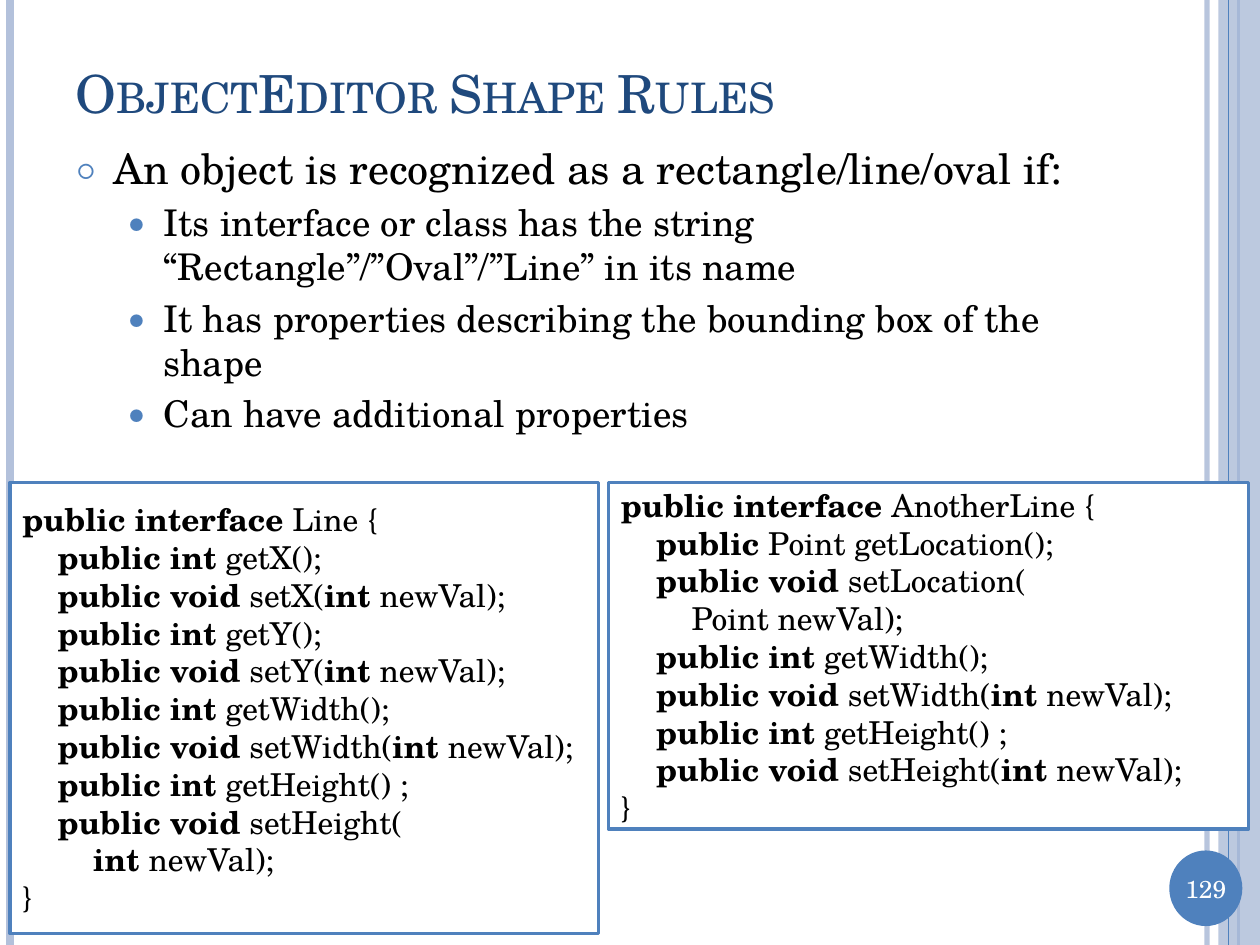
from lxml import etree
from pptx import Presentation
from pptx.dml.color import RGBColor
from pptx.enum.shapes import MSO_CONNECTOR as CONN, MSO_SHAPE as SHAPE
from pptx.enum.text import MSO_ANCHOR as ANCHOR, PP_ALIGN as ALIGN
from pptx.oxml.ns import qn
from pptx.util import Inches, Pt

FONT = "TeX Gyre Schola"
BLUE = RGBColor(0x4F, 0x81, 0xBD)
PALE = RGBColor(0xB3, 0xC1, 0xDB)
NAVY = RGBColor(0x1F, 0x49, 0x7D)
WHITE = RGBColor(0xFF, 0xFF, 0xFF)
BLACK = RGBColor(0, 0, 0)

CODE_INDENT = 0.28
RULES = [
    (0, "An object is recognized as a rectangle/line/oval if:"),
    (1, "Its interface or class has the string “Rectangle”/”Oval”/”Line” in its name"),
    (1, "It has properties describing the bounding box of the shape"),
    (1, "Can have additional properties"),
]
BULLETS = [("○", 70, 24, 0.3, 6), ("●", 80, 21, 0.7, 4.2)]
LINE_CODE = [
    (0, "*public interface* Line {"),
    (1, "*public int *getX();"),
    (1, "*public void *setX(*int *newVal);"),
    (1, "*public int *getY();"),
    (1, "*public void *setY(*int *newVal);"),
    (1, "*public int *getWidth();"),
    (1, "*public void *setWidth(*int *newVal);"),
    (1, "*public int *getHeight() ;"),
    (1, "*public void *setHeight("),
    (2, "*int *newVal);"),
    (0, "}"),
]
ANOTHER_LINE_CODE = [
    (0, "*public interface *AnotherLine {"),
    (1, "*public* Point getLocation();"),
    (1, "*public void *setLocation("),
    (2, "Point newVal);"),
    (1, "*public int *getWidth();"),
    (1, "*public void *setWidth(*int *newVal);"),
    (1, "*public int *getHeight() ;"),
    (1, "*public void *setHeight(*int *newVal);"),
    (0, "}"),
]


def add_text(tf, text, size=18, color=BLACK, align=ALIGN.LEFT, small_caps=False,
             before=0, left=0, hanging=0, level=0):
    """Add a paragraph, with bold switched on and off at each asterisk."""
    p = tf.paragraphs[0] if not tf.paragraphs[0].runs else tf.add_paragraph()
    p.alignment, p.level, p.space_before = align, level, Pt(before)
    pPr = p._p.get_or_add_pPr()
    pPr.set("marL", str(Inches(left)))
    pPr.set("indent", str(-Inches(hanging)))
    for i, part in enumerate(text.split("*")):
        if part:
            r = p.add_run()
            r.text = part
            r.font.name, r.font.size, r.font.bold = FONT, Pt(size), i % 2 == 1
            r.font.color.rgb = color
            if small_caps:
                r._r.get_or_add_rPr().set("cap", "small")
    return p


def set_bullet(p, char, percent):
    """Give a paragraph a blue bullet."""
    pPr = p._p.get_or_add_pPr()
    color = etree.SubElement(pPr, qn("a:buClr"))
    etree.SubElement(color, qn("a:srgbClr"), val=str(BLUE))
    etree.SubElement(pPr, qn("a:buSzPct"), val=str(percent * 1000))
    etree.SubElement(pPr, qn("a:buFont"), typeface=FONT)
    etree.SubElement(pPr, qn("a:buChar"), char=char)


def set_opacity(element, percent):
    """Make the colour of a fill or line partly transparent."""
    color = next(element.iter(qn("a:srgbClr")))
    etree.SubElement(color, qn("a:alpha"), val=str(percent * 1000))


def add_box(slide, kind, box, fill, line=None):
    """Add a flat shape with an optional 2 pt outline."""
    sp = slide.shapes.add_shape(kind, *map(Inches, box))
    sp.shadow.inherit = False
    sp.fill.solid()
    sp.fill.fore_color.rgb = fill
    if line is None:
        sp.line.fill.background()
    else:
        sp.line.color.rgb, sp.line.width = line, Pt(2)
    return sp


def add_rule(slide, x, color, width, height):
    """Add a vertical rule from the top edge."""
    ln = slide.shapes.add_connector(CONN.STRAIGHT, Inches(x), 0, Inches(x), Inches(height))
    ln.line.color.rgb, ln.line.width = color, Pt(width)
    etree.SubElement(ln._element.spPr, qn("a:effectLst"))
    return ln


def add_side_bands(slide, box):
    """Draw the decorative rules and band at the slide edges."""
    left, top, width, height = box
    right = left + width
    set_opacity(add_rule(slide, right - 0.42, PALE, 3, height)._element.spPr, 93)
    add_rule(slide, left + 0.08, PALE, 4.5, height)
    add_rule(slide, right - 0.17, BLUE, 1.5, height)
    band = add_box(slide, SHAPE.RECTANGLE, (right - 0.33, top, 0.33, height), PALE)
    set_opacity(band._element.spPr, 87)
    add_rule(slide, right - 0.25, BLUE, 0.75, height)


def add_page_number(slide, box, number):
    """Draw the page number in a disc."""
    tf = add_box(slide, SHAPE.OVAL, box, BLUE).text_frame
    tf.margin_left = tf.margin_right = 0
    tf.word_wrap, tf.vertical_anchor = False, ANCHOR.MIDDLE
    add_text(tf, number, size=14, color=WHITE, align=ALIGN.CENTER)


def add_title(slide, box, text):
    """Place and format the title placeholder."""
    sp = slide.shapes.title
    sp.left, sp.top, sp.width, sp.height = map(Inches, box)
    sp.text_frame.vertical_anchor = ANCHOR.MIDDLE
    add_text(sp.text_frame, text, size=30, color=NAVY, small_caps=True)


def add_rules_list(slide, box, items):
    """Write the two-level bulleted list."""
    tf = slide.shapes.add_textbox(*map(Inches, box)).text_frame
    tf.word_wrap = True
    for level, text in items:
        char, percent, size, left, before = BULLETS[level]
        p = add_text(tf, text, size=size, before=before, left=left, hanging=0.3, level=level)
        set_bullet(p, char, percent)


def add_code_box(slide, box, lines):
    """Write an indented code listing in an outlined box."""
    tf = add_box(slide, SHAPE.RECTANGLE, box, WHITE, BLUE).text_frame
    tf.word_wrap, tf.vertical_anchor = True, ANCHOR.MIDDLE
    for depth, text in lines:
        add_text(tf, text, left=depth * CODE_INDENT)


def main():
    """Build and save the slide."""
    prs = Presentation()
    prs.slide_width, prs.slide_height = Inches(10), Inches(7.5)
    slide = prs.slides.add_slide(prs.slide_layouts[5])
    add_side_bands(slide, (0, 0, 10, 7.5))
    add_page_number(slide, (9.28, 6.75, 0.58, 0.6), "129")
    add_title(slide, (0.5, 0.3, 8.67, 0.87), "ObjectEditor Shape Rules")
    add_rules_list(slide, (0.5, 1.08, 8.67, 2.67), RULES)
    add_code_box(slide, (0.08, 3.83, 4.67, 3.58), LINE_CODE)
    add_code_box(slide, (4.83, 3.83, 5.08, 2.75), ANOTHER_LINE_CODE)
    prs.save("out.pptx")


if __name__ == "__main__":
    main()
